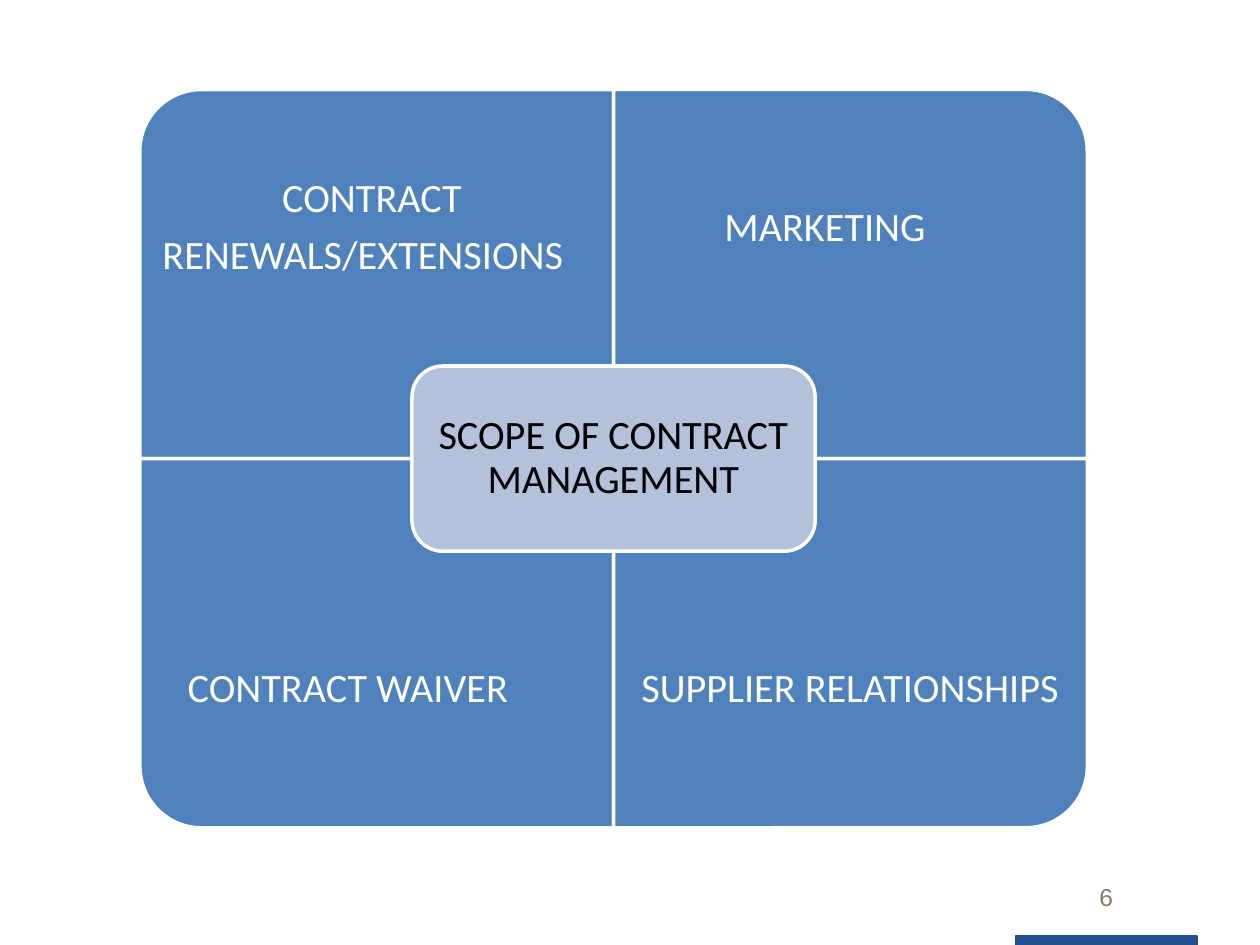
from dataclasses import dataclass

from pptx import Presentation
from pptx.dml.color import RGBColor
from pptx.enum.shapes import MSO_SHAPE
from pptx.enum.text import MSO_ANCHOR, PP_ALIGN
from pptx.util import Inches, Pt

RECTANGLE = MSO_SHAPE.RECTANGLE
ROUNDED = MSO_SHAPE.ROUNDED_RECTANGLE
ONE_ROUND_CORNER = MSO_SHAPE.ROUND_1_RECTANGLE
CENTER = PP_ALIGN.CENTER
TOP, MIDDLE = MSO_ANCHOR.TOP, MSO_ANCHOR.MIDDLE


@dataclass(frozen=True)
class Theme:
    quadrant: str = "4F81BD"
    center: str = "B3C1DB"
    white: str = "FFFFFF"
    black: str = "000000"
    footer_bar: str = "254E8E"
    page_number: str = "897865"
    body_font: str = "Calibri"
    number_font: str = "Arial"
    body_size: int = 23
    number_size: int = 14


class SlideBuilder:
    def __init__(self, slide, theme):
        self.slide = slide
        self.theme = theme

    def add_box(self, kind, left, top, width, height, fill, line, line_width, rotation=0):
        shape = self.slide.shapes.add_shape(
            kind, Inches(left), Inches(top), Inches(width), Inches(height))
        shape.shadow.inherit = False
        shape.fill.solid()
        shape.fill.fore_color.rgb = RGBColor.from_string(fill)
        shape.line.color.rgb = RGBColor.from_string(line)
        shape.line.width = Pt(line_width)
        shape.rotation = rotation
        return shape

    def add_text_box(self, left, top, width, height):
        return self.slide.shapes.add_textbox(
            Inches(left), Inches(top), Inches(width), Inches(height))

    def write_lines(self, shape, lines, font, size, color):
        """Fill the shape with one centred paragraph per line."""
        frame = shape.text_frame
        frame.word_wrap = True
        frame.text = "\n".join(lines)
        for paragraph in frame.paragraphs:
            paragraph.alignment = CENTER
            paragraph.font.name = font
            paragraph.font.size = Pt(size)
            paragraph.font.color.rgb = RGBColor.from_string(color)
        return frame

    def write_label(self, shape, lines, color, margin):
        theme = self.theme
        frame = self.write_lines(shape, lines, theme.body_font, theme.body_size, color)
        frame.vertical_anchor = MIDDLE
        frame.margin_left = frame.margin_right = Inches(margin)
        frame.margin_top = frame.margin_bottom = Inches(margin)
        for paragraph in frame.paragraphs:
            paragraph.line_spacing = 0.9
            paragraph.space_after = Pt(8)

    def add_quadrant(self, left, top, width, height, rotation):
        """Place a quadrant whose rotated outline covers the given area."""
        center_x, center_y = left + width / 2, top + height / 2
        if rotation % 180:
            width, height = height, width
        self.add_box(ONE_ROUND_CORNER, center_x - width / 2, center_y - height / 2,
                     width, height, self.theme.quadrant, self.theme.white, 2, rotation)

    def add_page_number(self, number, left, top, width, height):
        theme = self.theme
        shape = self.add_text_box(left, top, width, height)
        frame = self.write_lines(shape, [number], theme.number_font,
                                 theme.number_size, theme.page_number)
        frame.vertical_anchor = TOP


def main():
    presentation = Presentation()
    presentation.slide_width, presentation.slide_height = Inches(10), Inches(7.5)
    slide = presentation.slides.add_slide(presentation.slide_layouts[6])
    theme = Theme()
    builder = SlideBuilder(slide, theme)

    builder.add_box(RECTANGLE, 8.06, 7.43, 1.44, 0.07,
                    theme.footer_bar, theme.footer_bar, 0.75)

    matrix_left, matrix_top = 1.11, 0.71
    width, height = 3.76, 2.93
    label_height = 2.2
    # Trailing tabs shift the centred labels to the left.
    quadrants = [
        (0, 0, 270, ["CONTRACT ", "RENEWALS/EXTENSIONS\t"]),
        (1, 0, 0, ["MARKETING\t"]),
        (0, 1, 180, ["CONTRACT WAIVER\t"]),
        (1, 1, 90, ["SUPPLIER RELATIONSHIPS"]),
    ]
    for column, row, rotation, lines in quadrants:
        left, top = matrix_left + column * width, matrix_top + row * height
        builder.add_quadrant(left, top, width, height, rotation)
        label_top = top + row * (height - label_height)
        label = builder.add_text_box(left, label_top, width, label_height)
        builder.write_label(label, lines, theme.white, 0.18)

    center_width, center_height = 3.2, 1.47
    center = builder.add_box(
        ROUNDED, matrix_left + width - center_width / 2,
        matrix_top + height - center_height / 2,
        center_width, center_height, theme.center, theme.white, 2)
    builder.write_label(center, ["SCOPE OF CONTRACT MANAGEMENT"], theme.black, 0.1)

    builder.add_page_number("6", 8.06, 6.95, 1.44, 0.4)
    presentation.save("out.pptx")


if __name__ == "__main__":
    main()
